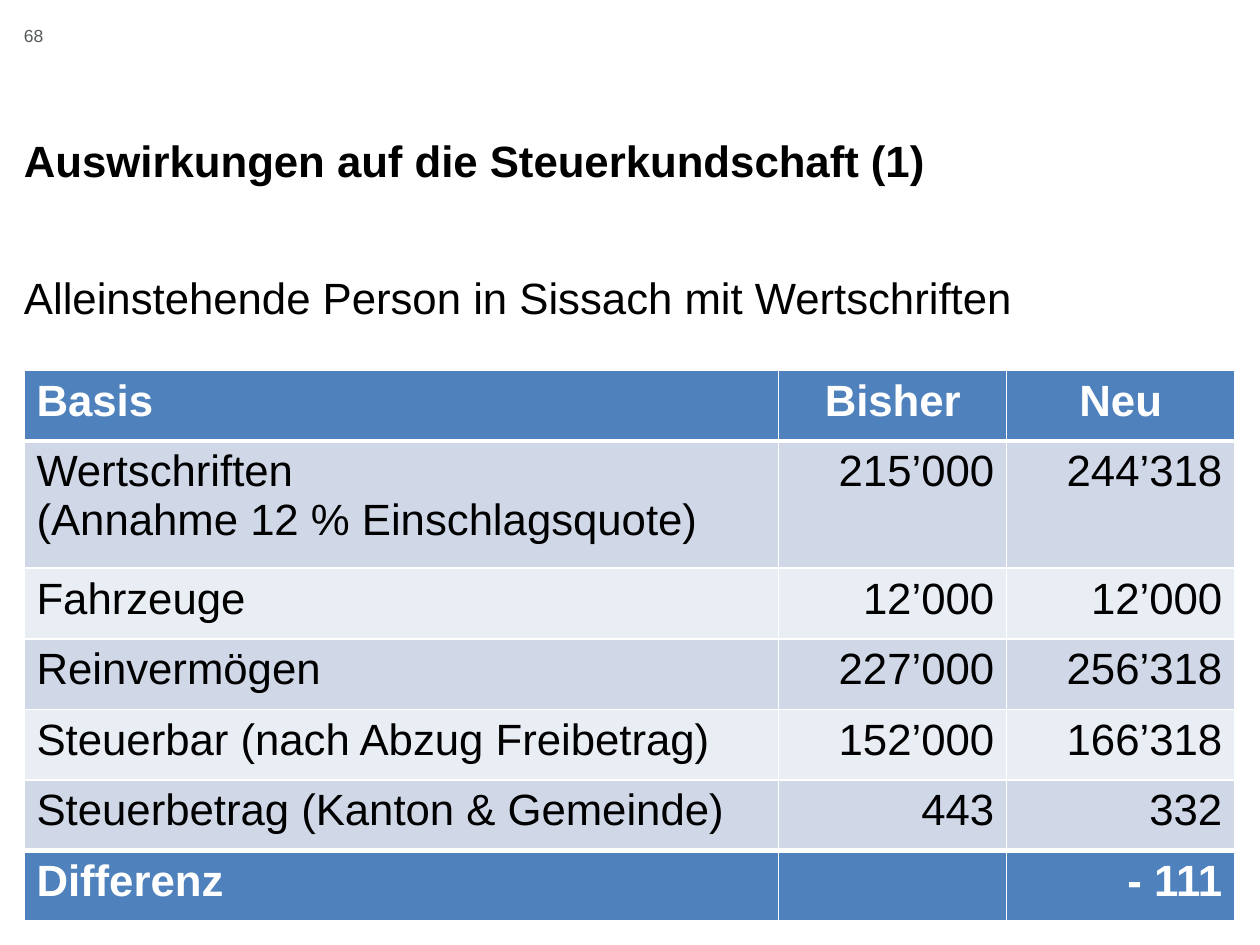
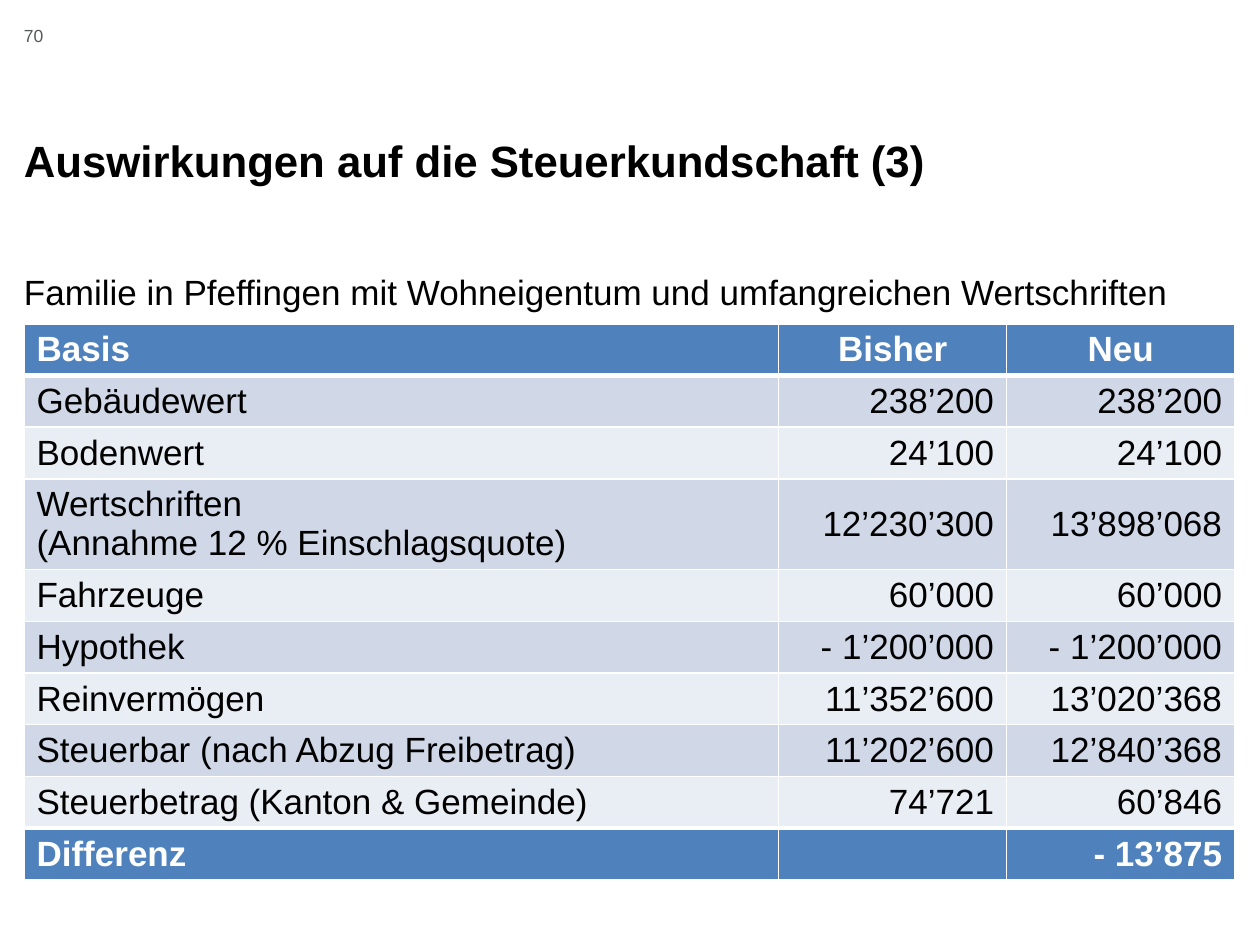
from pptx import Presentation
from pptx.dml.color import RGBColor
from pptx.enum.text import MSO_ANCHOR as Anchor, MSO_AUTO_SIZE as AutoSize, PP_ALIGN as Align
from pptx.oxml.ns import qn
from pptx.util import Inches, Pt
from lxml.etree import SubElement

# Shared look
FONT = "Arial"
BLACK, WHITE, GREY = "000000", "FFFFFF", "555959"
ACCENT, BANDS = "4F81BD", ("D0D8E8", "E9EDF4")
THIN, THICK = 1, 3

# Shared grid: slide size, side margin and table columns
WIDTH, HEIGHT = Inches(10), Inches(7.5)
LEFT = Inches(0.19)
COLUMNS = [Inches(5.99), Inches(1.81), Inches(1.81)]
CONTENT_WIDTH = sum(COLUMNS)

HEADER = ("Basis", "Bisher", "Neu")
SECURITIES = "Wertschriften\n(Annahme 12 % Einschlagsquote)"
TAXABLE = "Steuerbar (nach Abzug Freibetrag)"
TAX = "Steuerbetrag (Kanton & Gemeinde)"

SINGLE_CASE = [
    (SECURITIES, "215’000", "244’318"),
    ("Fahrzeuge", "12’000", "12’000"),
    ("Reinvermögen", "227’000", "256’318"),
    (TAXABLE, "152’000", "166’318"),
    (TAX, "443", "332"),
    ("Differenz", "", "- 111"),
]
FAMILY_CASE = [
    ("Gebäudewert", "238’200", "238’200"),
    ("Bodenwert", "24’100", "24’100"),
    (SECURITIES, "12’230’300", "13’898’068"),
    ("Fahrzeuge", "60’000", "60’000"),
    ("Hypothek", "- 1’200’000", "- 1’200’000"),
    ("Reinvermögen", "11’352’600", "13’020’368"),
    (TAXABLE, "11’202’600", "12’840’368"),
    (TAX, "74’721", "60’846"),
    ("Differenz", "", "- 13’875"),
]


def rgb(value):
    return RGBColor.from_string(value)


def style(paragraph, size, color=BLACK, bold=False, align=Align.LEFT):
    paragraph.alignment = align
    font = paragraph.font
    font.name, font.size, font.bold = FONT, Pt(size), bold
    font.color.rgb = rgb(color)


def clear_insets(frame):
    frame.margin_left = frame.margin_right = frame.margin_top = frame.margin_bottom = 0
    frame.word_wrap = True
    frame.auto_size = AutoSize.NONE


def add_title(slide, text):
    title = slide.shapes.title
    title.left, title.top = LEFT, Inches(1.06)
    title.width, title.height = CONTENT_WIDTH, Inches(0.81)
    frame = title.text_frame
    clear_insets(frame)
    frame.margin_bottom = Inches(0.4)
    frame.vertical_anchor = Anchor.BOTTOM
    frame.text = text
    frame.paragraphs[0].line_spacing = 0.7
    style(frame.paragraphs[0], 25, bold=True)


def add_text(slide, text, top, width, height, size, color=BLACK):
    frame = slide.shapes.add_textbox(LEFT, top, width, height).text_frame
    clear_insets(frame)
    frame.text = text
    style(frame.paragraphs[0], size, color)


def set_borders(cell, top, bottom):
    properties = cell._tc.get_or_add_tcPr()
    for side, points in (("L", THIN), ("R", THIN), ("T", top), ("B", bottom)):
        line = SubElement(properties, qn(f"a:ln{side}"), w=str(Pt(points)))
        fill = SubElement(line, qn("a:solidFill"))
        SubElement(fill, qn("a:srgbClr"), val=WHITE)


def add_tax_table(slide, case, top, size, row_height, tall_row, number_anchor):
    rows = [HEADER, *case]
    last = len(rows) - 1
    heights = [tall_row if "\n" in row[0] else row_height for row in rows]
    table = slide.shapes.add_table(
        len(rows), len(COLUMNS), LEFT, top, CONTENT_WIDTH, sum(heights)).table
    for column, width in zip(table.columns, COLUMNS):
        column.width = width

    for r, (row, height) in enumerate(zip(rows, heights)):
        table.rows[r].height = height
        accented = r in (0, last)
        # The header and the result are set off by thick rules
        upper = THICK if r in (1, last) else THIN
        lower = THICK if r in (0, last - 1) else THIN
        for c, text in enumerate(row):
            cell = table.cell(r, c)
            set_borders(cell, upper, lower)
            cell.fill.solid()
            cell.fill.fore_color.rgb = rgb(ACCENT if accented else BANDS[(r - 1) % 2])
            cell.text = text
            if c and not accented:
                cell.vertical_anchor = number_anchor
            align = Align.LEFT if c == 0 else Align.CENTER if r == 0 else Align.RIGHT
            for paragraph in cell.text_frame.paragraphs:
                style(paragraph, size, WHITE if accented else BLACK, accented, align)


def add_case_slide(deck, number, part, household, case, size, **table_layout):
    slide = deck.slides.add_slide(deck.slide_layouts[5])
    add_text(slide, number, Inches(0.2), Inches(0.44), Inches(0.4), 10, GREY)
    add_title(slide, f"Auswirkungen auf die Steuerkundschaft ({part})")
    add_text(slide, household, Inches(2.15), CONTENT_WIDTH, Inches(0.42), size)
    add_tax_table(slide, case, size=size, **table_layout)


def main():
    deck = Presentation()
    deck.slide_width, deck.slide_height = WIDTH, HEIGHT
    add_case_slide(
        deck, "68", 1, "Alleinstehende Person in Sissach mit Wertschriften",
        SINGLE_CASE, 25, top=Inches(2.94), row_height=Inches(0.56),
        tall_row=Inches(1.01), number_anchor=Anchor.TOP)
    add_case_slide(
        deck, "70", 3,
        "Familie in Pfeffingen mit Wohneigentum und umfangreichen Wertschriften",
        FAMILY_CASE, 20, top=Inches(2.57), row_height=Inches(0.41),
        tall_row=Inches(0.72), number_anchor=Anchor.MIDDLE)
    deck.save("out.pptx")


if __name__ == "__main__":
    main()
